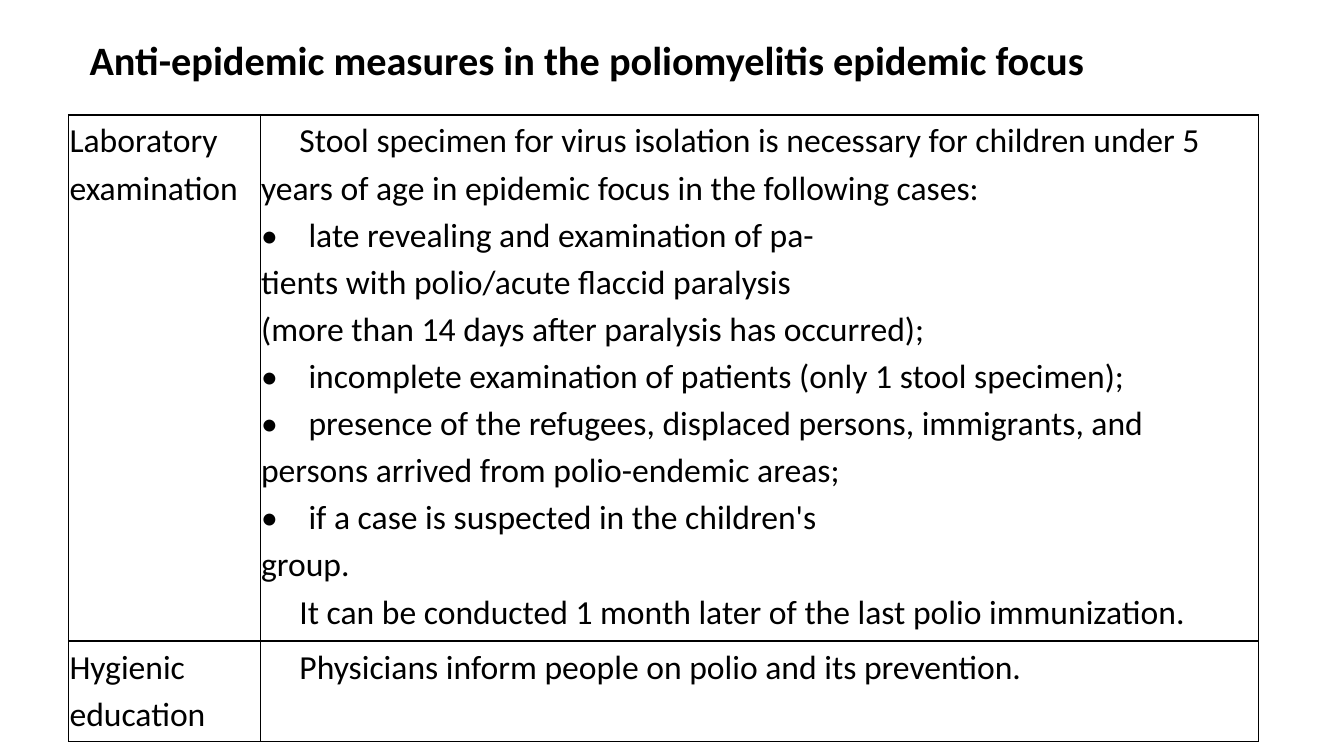
from lxml.etree import SubElement
from pptx import Presentation
from pptx.dml.color import RGBColor
from pptx.enum.text import MSO_ANCHOR
from pptx.oxml.ns import qn
from pptx.util import Inches, Pt

BLACK = RGBColor(0x00, 0x00, 0x00)
FONT = "Calibri"
COLS, ROWS = (1.9, 9.9), (5.22, 1.0)
FIRST_LINE, BULLET_TAB = Inches(0.38), Inches(0.47)

# Each cell is a list of (paragraph kind, text)
MEASURES = [
    [
        [("plain", "Laboratory examination")],
        [
            ("indent", "Stool specimen for virus isolation is necessary for children under 5 "
                       "years of age in epidemic focus in the following cases:"),
            ("bullet", "late revealing and examination of pa-"),
            ("plain", "tients with polio/acute flaccid paralysis"),
            ("plain", "(more than 14 days after paralysis has occurred);"),
            ("bullet", "incomplete examination of patients (only 1 stool specimen);"),
            ("bullet", "presence of the refugees, displaced persons, immigrants, and "
                       "persons arrived from polio-endemic areas;"),
            ("bullet", "if a case is suspected in the children's"),
            ("plain", "group."),
            ("indent", "It can be conducted 1 month later of the last polio immunization."),
        ],
    ],
    [
        [("plain", "Hygienic education")],
        [("indent", "Physicians inform people on polio and its prevention.")],
    ],
]


def style(p, size, spacing, bold=False):
    p.line_spacing = spacing
    for r in p.runs:
        r.font.name, r.font.size, r.font.bold = FONT, Pt(size), bold
        r.font.color.rgb = BLACK


def add_borders(cell):
    tcPr = cell._tc.get_or_add_tcPr()
    for side in ("a:lnL", "a:lnR", "a:lnT", "a:lnB"):
        ln = SubElement(tcPr, qn(side), w=str(Pt(1)))
        fill = SubElement(ln, qn("a:solidFill"))
        SubElement(fill, qn("a:srgbClr"), val=str(BLACK))


prs = Presentation()
prs.slide_width, prs.slide_height = Inches(13.33), Inches(7.5)
s = prs.slides.add_slide(prs.slide_layouts[6])

# Title
tf = s.shapes.add_textbox(Inches(0.79), Inches(0.37), Inches(11.5), Inches(0.95)).text_frame
tf.word_wrap = True
tf.vertical_anchor = MSO_ANCHOR.TOP
tf.margin_top = Inches(0.03)
tf.text = "Anti-epidemic measures in the poliomyelitis epidemic focus"
style(tf.paragraphs[0], 28.8, 0.9, bold=True)

# Table of measures
table = s.shapes.add_table(len(ROWS), len(COLS), Inches(0.68), Inches(1.14),
                           Inches(sum(COLS)), Inches(sum(ROWS))).table
table.first_row = table.horz_banding = False
for column, width in zip(table.columns, COLS):
    column.width = Inches(width)
for row, height in zip(table.rows, ROWS):
    row.height = Inches(height)

for row, contents in zip(table.rows, MEASURES):
    for cell, paragraphs in zip(row.cells, contents):
        add_borders(cell)
        cell.fill.background()
        cell.margin_left = cell.margin_right = Inches(0.01)
        cell.margin_top = cell.margin_bottom = 0
        tf = cell.text_frame
        for i, (kind, text) in enumerate(paragraphs):
            p = tf.add_paragraph() if i else tf.paragraphs[0]
            p.text = "•\t" + text if kind == "bullet" else text
            style(p, 24, 1.15)
            # Wrapped lines return to the cell edge, so bullets use a tab stop
            pPr = p._p.get_or_add_pPr()
            if kind == "indent":
                pPr.set("indent", str(FIRST_LINE))
            elif kind == "bullet":
                tabs = SubElement(pPr, qn("a:tabLst"))
                SubElement(tabs, qn("a:tab"), pos=str(BULLET_TAB), algn="l")

prs.save("out.pptx")
